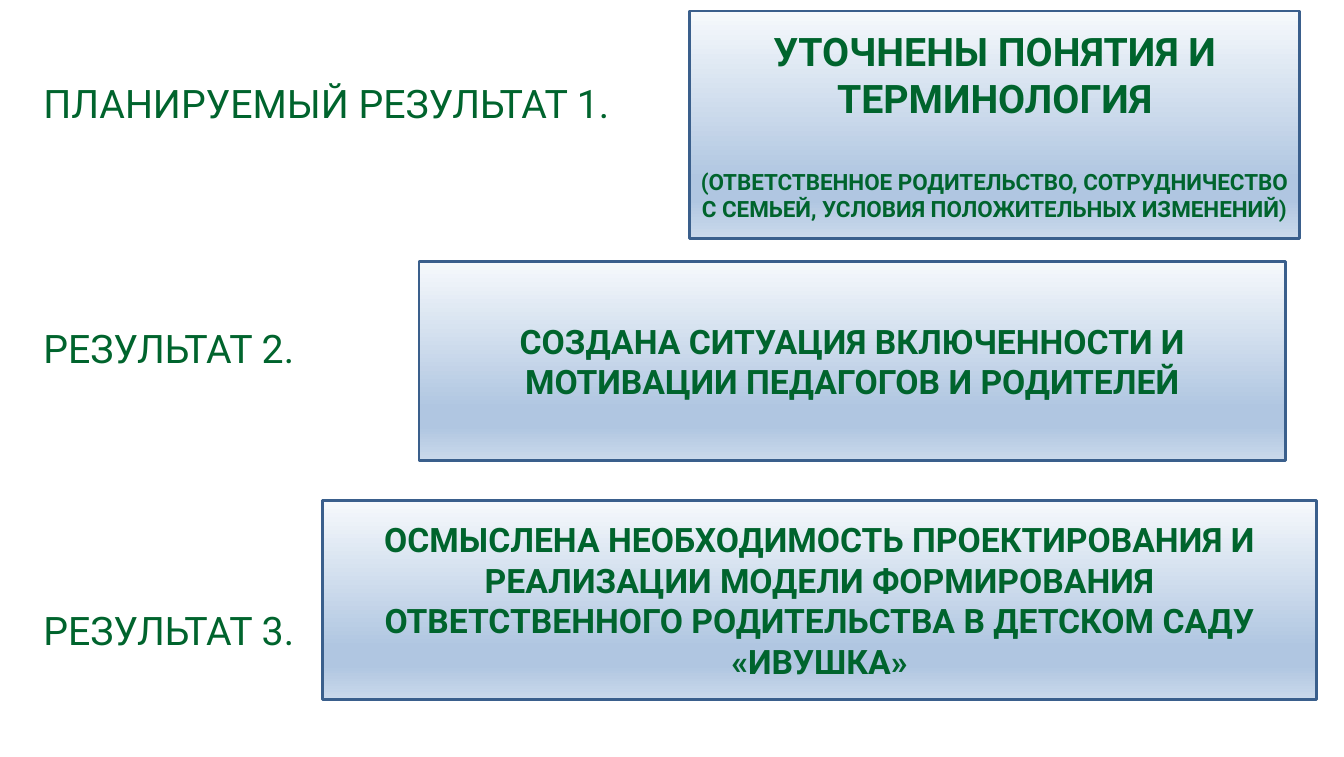
"""Slide with three planned results and their descriptions."""
import pptx
import pptx.dml.color
import pptx.enum.shapes
import pptx.enum.text
import pptx.oxml
import pptx.oxml.ns
import pptx.util
from lxml import etree

Inches, Pt = pptx.util.Inches, pptx.util.Pt
GREEN, BORDER = "00642D", "3A5F8C"
GRADIENT = [(0, "F6F9FC"), (74, "B0C6E1"), (83, "B0C6E1"), (100, "CAD9EB")]


def color(value):
    return pptx.dml.color.RGBColor.from_string(value)


def add_run(paragraph, text, size, bold=False):
    run = paragraph.add_run()
    run.text = text
    run.font.name = "Roboto"
    run.font.size = Pt(size)
    run.font.bold = bold
    run.font.color.rgb = color(GREEN)


deck = pptx.Presentation()
deck.slide_width, deck.slide_height = Inches(13.31), Inches(7.5)
slide = deck.slides.add_slide(deck.slide_layouts[6])

labels = [
    ("ПЛАНИРУЕМЫЙ РЕЗУЛЬТАТ 1.", 0),
    ("РЕЗУЛЬТАТ 2.", 144.5),
    ("РЕЗУЛЬТАТ 3.", 171),
]
label_frame = slide.shapes.add_textbox(
    Inches(0.43), Inches(0.84), Inches(12.26), Inches(6.37)).text_frame
label_frame.word_wrap = True
label_frame.margin_left = label_frame.margin_right = 0
label_frame.margin_top = label_frame.margin_bottom = 0
for index, (label, gap) in enumerate(labels):
    paragraph = label_frame.add_paragraph() if index else label_frame.paragraphs[0]
    paragraph.line_spacing = 0.9
    paragraph.space_before = Pt(gap)
    add_run(paragraph, label, 28)

results = [
    ((6.83, 0.11, 6.04, 2.25), [
        ("УТОЧНЕНЫ ПОНЯТИЯ И ТЕРМИНОЛОГИЯ", 28, 0),
        ("(ОТВЕТСТВЕННОЕ РОДИТЕЛЬСТВО, СОТРУДНИЧЕСТВО С СЕМЬЕЙ, "
         "УСЛОВИЯ ПОЛОЖИТЕЛЬНЫХ ИЗМЕНЕНИЙ)", 16, 33),
    ]),
    ((4.15, 2.59, 8.58, 1.97), [
        ("СОЗДАНА СИТУАЦИЯ ВКЛЮЧЕННОСТИ И МОТИВАЦИИ ПЕДАГОГОВ И РОДИТЕЛЕЙ", 24, 0),
    ]),
    ((3.19, 4.96, 9.85, 1.97), [
        ("ОСМЫСЛЕНА НЕОБХОДИМОСТЬ ПРОЕКТИРОВАНИЯ И "
         "РЕАЛИЗАЦИИ МОДЕЛИ ФОРМИРОВАНИЯ", 24, 0),
        ("ОТВЕТСТВЕННОГО РОДИТЕЛЬСТВА В ДЕТСКОМ САДУ «ИВУШКА»", 24, 0),
    ]),
]
for bounds, lines in results:
    result = slide.shapes.add_shape(
        pptx.enum.shapes.MSO_SHAPE.RECTANGLE, *map(Inches, bounds))
    result.shadow.inherit = False
    result.line.color.rgb = color(BORDER)
    result.line.width = Pt(2)
    result.fill.gradient()
    result.fill.gradient_angle = 270
    stops = next(result._element.spPr.iter(pptx.oxml.ns.qn("a:gsLst")))
    for stop in list(stops):
        stops.remove(stop)
    for position, shade in GRADIENT:
        stop = etree.SubElement(stops, pptx.oxml.ns.qn("a:gs"), pos=str(position * 1000))
        etree.SubElement(stop, pptx.oxml.ns.qn("a:srgbClr"), val=shade)
    frame = result.text_frame
    frame.word_wrap = True
    frame.vertical_anchor = pptx.enum.text.MSO_ANCHOR.MIDDLE
    for index, (text, size, gap) in enumerate(lines):
        paragraph = frame.add_paragraph() if index else frame.paragraphs[0]
        paragraph.alignment = pptx.enum.text.PP_ALIGN.CENTER
        paragraph.space_before = Pt(gap)
        add_run(paragraph, text, size, bold=True)

deck.save("out.pptx")
